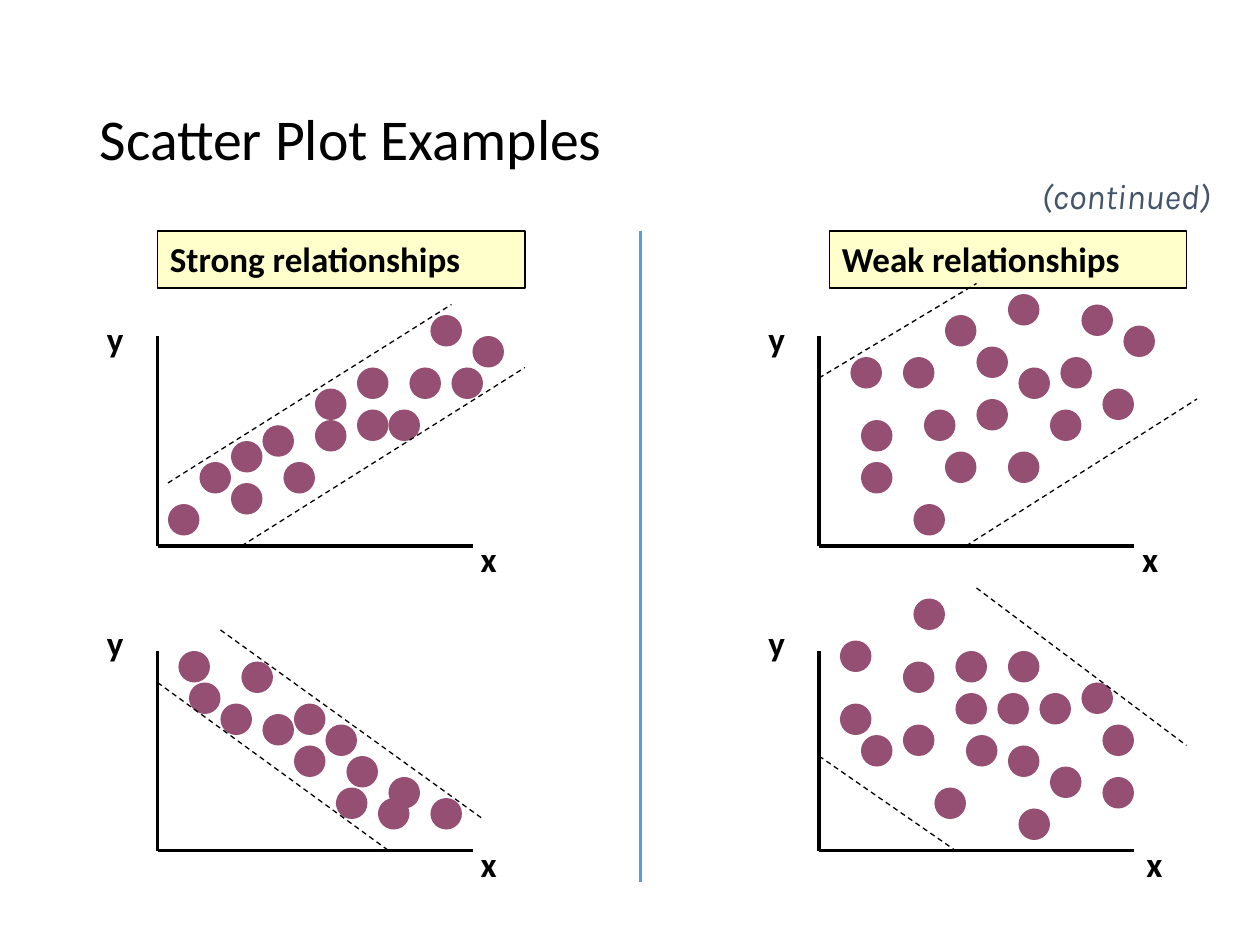
from dataclasses import dataclass

from lxml import etree
from pptx import Presentation
from pptx.dml.color import RGBColor
from pptx.enum.dml import MSO_LINE
from pptx.enum.shapes import MSO_CONNECTOR, MSO_SHAPE
from pptx.enum.text import MSO_ANCHOR, MSO_AUTO_SIZE, PP_ALIGN
from pptx.oxml.ns import qn
from pptx.util import Inches, Pt

STRAIGHT = MSO_CONNECTOR.STRAIGHT
DASH = MSO_LINE.DASH
OVAL, RECT = MSO_SHAPE.OVAL, MSO_SHAPE.RECTANGLE
MIDDLE, TOP = MSO_ANCHOR.MIDDLE, MSO_ANCHOR.TOP
LEFT = PP_ALIGN.LEFT
GROW, FIXED = MSO_AUTO_SIZE.SHAPE_TO_FIT_TEXT, MSO_AUTO_SIZE.NONE

BLACK, PLUM, CREAM = "000000", "954F72", "FFFFCC"
BLUE, SLATE = "5B9BD5", "44546A"
FONT, NOTE_FONT = "Calibri", "Karla"

CELLS_PER_INCH = 12  # the slide is a grid of 120 columns by 90 rows
DOT = 3
AXIS_WIDTH = 30

Point = tuple[float, float]


@dataclass
class Header:
    text: str
    col: float
    width: float


@dataclass
class ScatterPlot:
    """Points are cells right of and above the origin; dots give their lower left."""
    col: float
    row: float
    height: float
    dots: list[Point]
    bands: list[tuple[Point, Point]]
    x_label_offset: float = 29.6


HEADERS = [
    Header("Strong relationships", 15, 35),
    Header("Weak relationships", 79, 34),
]

PLOTS = [
    ScatterPlot(
        15, 52, 20,
        [(1, 1), (4, 5), (26, 19), (28, 14), (7, 3), (30, 17), (19, 10), (19, 14),
         (24, 14), (15, 12), (7, 7), (10, 8.5), (22, 10), (15, 9), (12, 5)],
        [((1, 6), (28, 23)), ((8, 0), (35, 17))]),
    ScatterPlot(
        15, 81, 19,
        [(21, 2), (3, 13), (26, 2), (8, 15), (18, 6), (22, 4), (13, 11), (2, 16),
         (6, 11), (10, 10), (17, 3), (16, 9), (13, 7)],
        [((6, 21), (31, 3)), ((0, 16), (22, 0))]),
    ScatterPlot(
        78, 52, 20,
        [(15, 16), (4, 5), (18, 6), (23, 15), (8, 15), (9, 1), (12, 6), (19, 14),
         (12, 19), (4, 9), (3, 15), (10, 10), (22, 10), (15, 11), (18, 21),
         (29, 18), (27, 12), (25, 20)],
        [((0, 16), (15, 25)), ((14, 0), (36, 14))]),
    ScatterPlot(
        78, 81, 19,
        [(2, 11), (2, 17), (8, 9), (19, 1), (4, 8), (13, 16), (18, 7), (17, 12),
         (13, 12), (8, 15), (21, 12), (14, 8), (11, 3), (22, 5), (27, 9),
         (25, 13), (27, 4), (18, 16), (9, 21)],
        [((15, 25), (35, 10)), ((0, 9), (13, 0))],
        x_label_offset=30),
]


def cells(*values: float) -> list[int]:
    return [Inches(v / CELLS_PER_INCH) for v in values]


def rgb(value: str) -> RGBColor:
    return RGBColor.from_string(value)


def set_text(sp, text: str, size: float, font: str = FONT, color: str = BLACK,
             bold: bool = False, italic: bool = False):
    sp.text_frame.text = text
    p = sp.text_frame.paragraphs[0]
    p.alignment = LEFT
    f = p.runs[0].font
    f.name, f.size, f.bold, f.italic = font, Pt(size), bold, italic
    f.color.rgb = rgb(color)
    return p


def add_line(s, start: Point, end: Point, color: str, width: float,
             dash: MSO_LINE | None = None) -> None:
    line = s.shapes.add_connector(STRAIGHT, *cells(*start, *end))
    line.line.color.rgb = rgb(color)
    line.line.width = Pt(width)
    if dash is not None:
        line.line.dash_style = dash
    etree.SubElement(line._element.spPr, qn("a:effectLst"))


def add_label(s, text: str, col: float, row: float, width: float = 4.3, **style) -> None:
    sp = s.shapes.add_textbox(*cells(col, row, width, 5.2))
    set_text(sp, text, 20, **style)
    sp.text_frame.word_wrap = False
    sp.text_frame.auto_size = GROW


def add_header(s, header: Header) -> None:
    sp = s.shapes.add_shape(RECT, *cells(header.col, 22, header.width, 5.4))
    sp.shadow.inherit = False
    sp.fill.solid()
    sp.fill.fore_color.rgb = rgb(CREAM)
    sp.line.color.rgb = rgb(BLACK)
    sp.line.width = Pt(1)
    set_text(sp, header.text, 20, bold=True)
    tf = sp.text_frame
    tf.word_wrap, tf.auto_size, tf.vertical_anchor = True, GROW, TOP


def add_dot(s, col: float, row: float) -> None:
    sp = s.shapes.add_shape(OVAL, *cells(col, row, DOT, DOT))
    sp.shadow.inherit = False
    sp.rotation = 238.6
    sp.fill.solid()
    sp.fill.fore_color.rgb = rgb(PLUM)
    sp.line.fill.background()


def add_plot(s, plot: ScatterPlot) -> None:
    def place(point: Point) -> Point:
        return plot.col + point[0], plot.row - point[1]

    origin = place((0, 0))
    add_line(s, place((0, plot.height)), origin, BLACK, 2)
    add_line(s, origin, place((AXIS_WIDTH, 0)), BLACK, 2)
    add_label(s, "y", *place((-6, 22.4)), bold=True)
    add_label(s, "x", *place((plot.x_label_offset, 1.4)), bold=True)
    for x, y in plot.dots:
        add_dot(s, *place((x, y + DOT)))
    for start, end in plot.bands:
        add_line(s, place(start), place(end), BLACK, 0.75, DASH)


def add_title(s, text: str) -> None:
    title = s.shapes.title
    title.left, title.top = Inches(0.69), Inches(0.4)
    title.width, title.height = Inches(8.62), Inches(1.45)
    set_text(title, text, 33).line_spacing = 0.9
    title.text_frame.vertical_anchor = MIDDLE
    title.text_frame.auto_size = FIXED


def main() -> None:
    prs = Presentation()
    prs.slide_width, prs.slide_height = Inches(10), Inches(7.5)
    s = prs.slides.add_slide(prs.slide_layouts.get_by_name("Title Only"))
    add_title(s, "Scatter Plot Examples")
    add_label(s, "(continued)", 98, 16, 19.3, font=NOTE_FONT, color=SLATE, italic=True)
    for header in HEADERS:
        add_header(s, header)
    add_line(s, (61, 22), (61, 84), BLUE, 2.25)
    for plot in PLOTS:
        add_plot(s, plot)
    prs.save("out.pptx")


if __name__ == "__main__":
    main()
